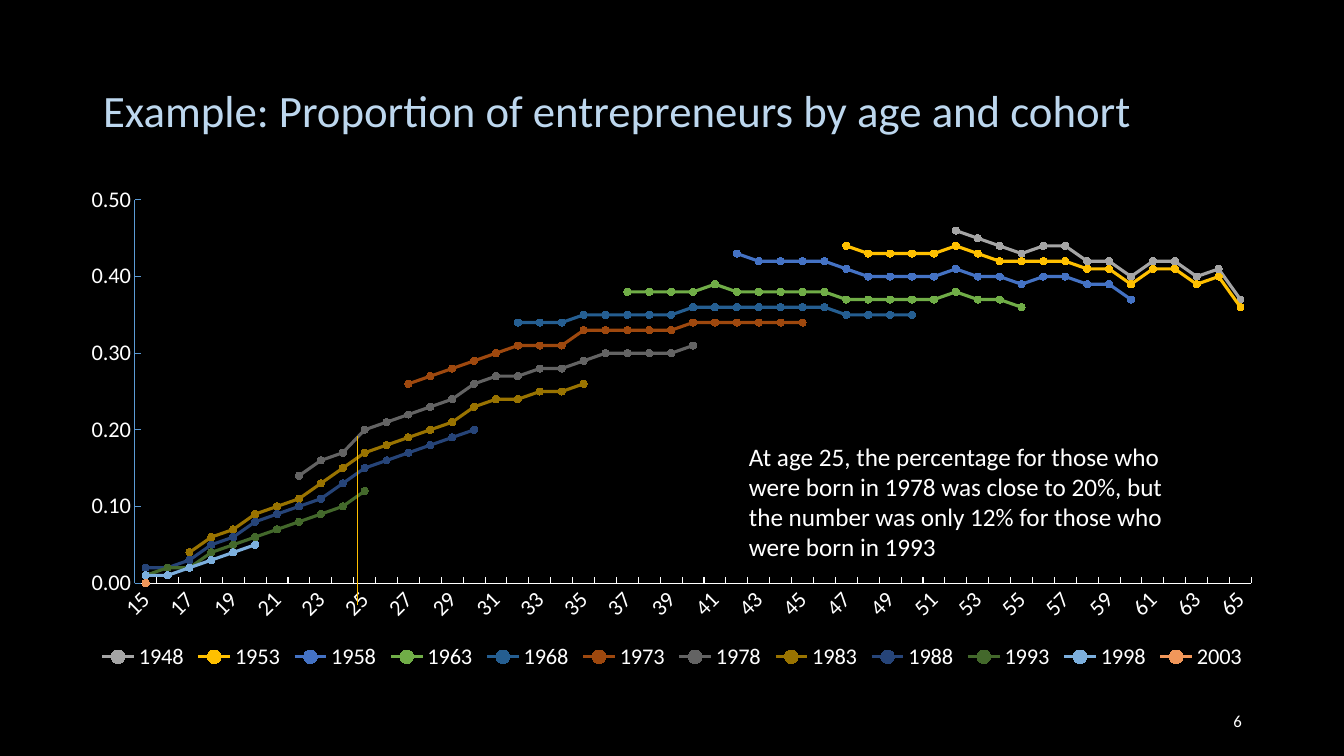
from lxml import etree
from pptx import Presentation
from pptx.chart.data import CategoryChartData
from pptx.dml.color import RGBColor
from pptx.enum.chart import XL_CHART_TYPE, XL_LEGEND_POSITION, XL_MARKER_STYLE, XL_TICK_MARK
from pptx.enum.shapes import MSO_CONNECTOR
from pptx.enum.text import MSO_ANCHOR, MSO_AUTO_SIZE, PP_ALIGN
from pptx.oxml import parse_xml
from pptx.oxml.ns import nsdecls, qn
from pptx.util import Pt

BLACK = RGBColor(0x00, 0x00, 0x00)
WHITE = RGBColor(0xFF, 0xFF, 0xFF)
PALE_BLUE = RGBColor(0xBD, 0xD7, 0xEE)
AXIS_BLUE = RGBColor(0x5B, 0x9B, 0xD5)
GOLD = RGBColor(0xFF, 0xC0, 0x00)

TITLE = "Example: Proportion of entrepreneurs by age and cohort"
NOTE = ("At age 25, the percentage for those who were born in 1978 was close to 20%, "
        "but the number was only 12% for those who were born in 1993")
PAGE_NUMBER = "6"
FONT = "Calibri"
FIRST_AGE, LAST_AGE = 15, 65

COHORTS = [
    ("1948", RGBColor(0xA5, 0xA5, 0xA5), 52,
     [46, 45, 44, 43, 44, 44, 42, 42, 40, 42, 42, 40, 41, 37]),
    ("1953", GOLD, 47,
     [44, 43, 43, 43, 43, 44, 43, 42, 42, 42, 42, 41, 41, 39, 41, 41, 39, 40, 36]),
    ("1958", RGBColor(0x44, 0x72, 0xC4), 42,
     [43, 42, 42, 42, 42, 41, 40, 40, 40, 40, 41, 40, 40, 39, 40, 40, 39, 39, 37]),
    ("1963", RGBColor(0x70, 0xAD, 0x47), 37,
     [38, 38, 38, 38, 39, 38, 38, 38, 38, 38, 37, 37, 37, 37, 37, 38, 37, 37, 36]),
    ("1968", RGBColor(0x25, 0x5E, 0x91), 32,
     [34, 34, 34, 35, 35, 35, 35, 35, 36, 36, 36, 36, 36, 36, 36, 35, 35, 35, 35]),
    ("1973", RGBColor(0x9E, 0x48, 0x0E), 27,
     [26, 27, 28, 29, 30, 31, 31, 31, 33, 33, 33, 33, 33, 34, 34, 34, 34, 34, 34]),
    ("1978", RGBColor(0x63, 0x63, 0x63), 22,
     [14, 16, 17, 20, 21, 22, 23, 24, 26, 27, 27, 28, 28, 29, 30, 30, 30, 30, 31]),
    ("1983", RGBColor(0x99, 0x73, 0x00), 17,
     [4, 6, 7, 9, 10, 11, 13, 15, 17, 18, 19, 20, 21, 23, 24, 24, 25, 25, 26]),
    ("1988", RGBColor(0x26, 0x44, 0x78), 15,
     [2, 2, 3, 5, 6, 8, 9, 10, 11, 13, 15, 16, 17, 18, 19, 20]),
    ("1993", RGBColor(0x43, 0x68, 0x2B), 15, [1, 2, 2, 4, 5, 6, 7, 8, 9, 10, 12]),
    ("1998", RGBColor(0x7C, 0xAF, 0xDD), 15, [1, 1, 2, 3, 4, 5]),
    ("2003", RGBColor(0xF1, 0x97, 0x5A), 15, [0]),
]

TITLE_BOX = (93, 40, 1159, 146)
CHART_BOX = (67, 176, 1210, 499)
PLOT_BOX = (135, 200, 1117, 383)
NOTE_BOX = (739, 436, 462, 132)
NUMBER_BOX = (950, 701, 302, 40)
AGE_LINE = (357, 605, 357, 436)
SCALE = 914400 / 100.8


def emu(*lengths):
    return [round(length * SCALE) for length in lengths]


def write_text(shape, text, size, color=WHITE, align=PP_ALIGN.LEFT,
               anchor=MSO_ANCHOR.TOP, line_spacing=None):
    frame = shape.text_frame
    frame.word_wrap = True
    frame.auto_size = MSO_AUTO_SIZE.NONE
    frame.vertical_anchor = anchor
    paragraph = frame.paragraphs[0]
    paragraph.alignment = align
    paragraph.line_spacing = line_spacing
    run = paragraph.add_run()
    run.text = text
    format_font(run.font, size, color)


def format_font(font, size, color=WHITE):
    font.name = FONT
    font.size = Pt(size)
    font.color.rgb = color


def format_axis(axis, line_color):
    axis.has_major_gridlines = False
    axis.major_tick_mark = XL_TICK_MARK.INSIDE
    axis.minor_tick_mark = XL_TICK_MARK.NONE
    axis.format.line.color.rgb = line_color
    axis.format.line.width = Pt(0.75)
    format_font(axis.tick_labels.font, 16)


def place_plot(chart):
    left, top, width, height = CHART_BOX
    plot_left, plot_top, plot_width, plot_height = PLOT_BOX
    fractions = {"x": (plot_left - left) / width, "y": (plot_top - top) / height,
                 "w": plot_width / width, "h": plot_height / height}
    plot_area = chart._chartSpace.chart.plotArea
    for layout in plot_area.findall(qn("c:layout")):
        plot_area.remove(layout)
    modes = '<c:layoutTarget val="inner"/><c:xMode val="edge"/><c:yMode val="edge"/>'
    sizes = "".join(f'<c:{key} val="{value:.3f}"/>' for key, value in fractions.items())
    plot_area.insert(0, parse_xml(
        f'<c:layout {nsdecls("c")}><c:manualLayout>{modes}{sizes}</c:manualLayout></c:layout>'))


def add_cohort_chart(slide):
    ages = range(FIRST_AGE, LAST_AGE + 1)
    data = CategoryChartData(number_format="#,##0.00")
    data.categories = [str(age) for age in ages]
    for name, color, start, percents in COHORTS:
        by_age = {start + step: percent / 100 for step, percent in enumerate(percents)}
        data.add_series(name, [by_age.get(age) for age in ages])
    chart = slide.shapes.add_chart(XL_CHART_TYPE.LINE_MARKERS, *emu(*CHART_BOX), data).chart
    format_font(chart.font, 10)
    chart.has_title = False
    chart.has_legend = True
    chart.legend.position = XL_LEGEND_POSITION.BOTTOM
    chart.legend.include_in_layout = False
    format_font(chart.legend.font, 16)

    format_axis(chart.category_axis, WHITE)
    label_body = chart.category_axis._element.find(qn("c:txPr")).find(qn("a:bodyPr"))
    label_body.set("rot", "-2700000")
    label_body.set("vert", "horz")
    value_axis = chart.value_axis
    format_axis(value_axis, AXIS_BLUE)
    value_axis.minimum_scale = 0
    value_axis.maximum_scale = 0.5
    value_axis.major_unit = 0.1
    value_axis.tick_labels.number_format = "#,##0.00"
    value_axis.tick_labels.number_format_is_linked = False

    chart.plots[0].vary_by_categories = False
    for series, (name, color, start, percents) in zip(chart.plots[0].series, COHORTS):
        series.smooth = False
        series.format.line.color.rgb = color
        series.format.line.width = Pt(2.25)
        series.marker.style = XL_MARKER_STYLE.CIRCLE
        series.marker.size = 5
        series.marker.format.fill.solid()
        series.marker.format.fill.fore_color.rgb = color
        series.marker.format.line.color.rgb = color
    place_plot(chart)


def main():
    presentation = Presentation()
    presentation.slide_width, presentation.slide_height = emu(1344, 756)
    slide = presentation.slides.add_slide(presentation.slide_layouts[5])
    slide.background.fill.solid()
    slide.background.fill.fore_color.rgb = BLACK

    title = slide.shapes.title
    title.left, title.top, title.width, title.height = emu(*TITLE_BOX)
    write_text(title, TITLE, 32, color=PALE_BLUE, anchor=MSO_ANCHOR.MIDDLE, line_spacing=0.9)

    add_cohort_chart(slide)
    write_text(slide.shapes.add_textbox(*emu(*NOTE_BOX)), NOTE, 18)

    age_line = slide.shapes.add_connector(MSO_CONNECTOR.STRAIGHT, *emu(*AGE_LINE))
    age_line.line.color.rgb = GOLD
    age_line.line.width = Pt(0.5)
    etree.SubElement(age_line._element.spPr, qn("a:effectLst"))

    write_text(slide.shapes.add_textbox(*emu(*NUMBER_BOX)), PAGE_NUMBER, 12,
               align=PP_ALIGN.RIGHT, anchor=MSO_ANCHOR.MIDDLE)
    presentation.save("out.pptx")


if __name__ == "__main__":
    main()
